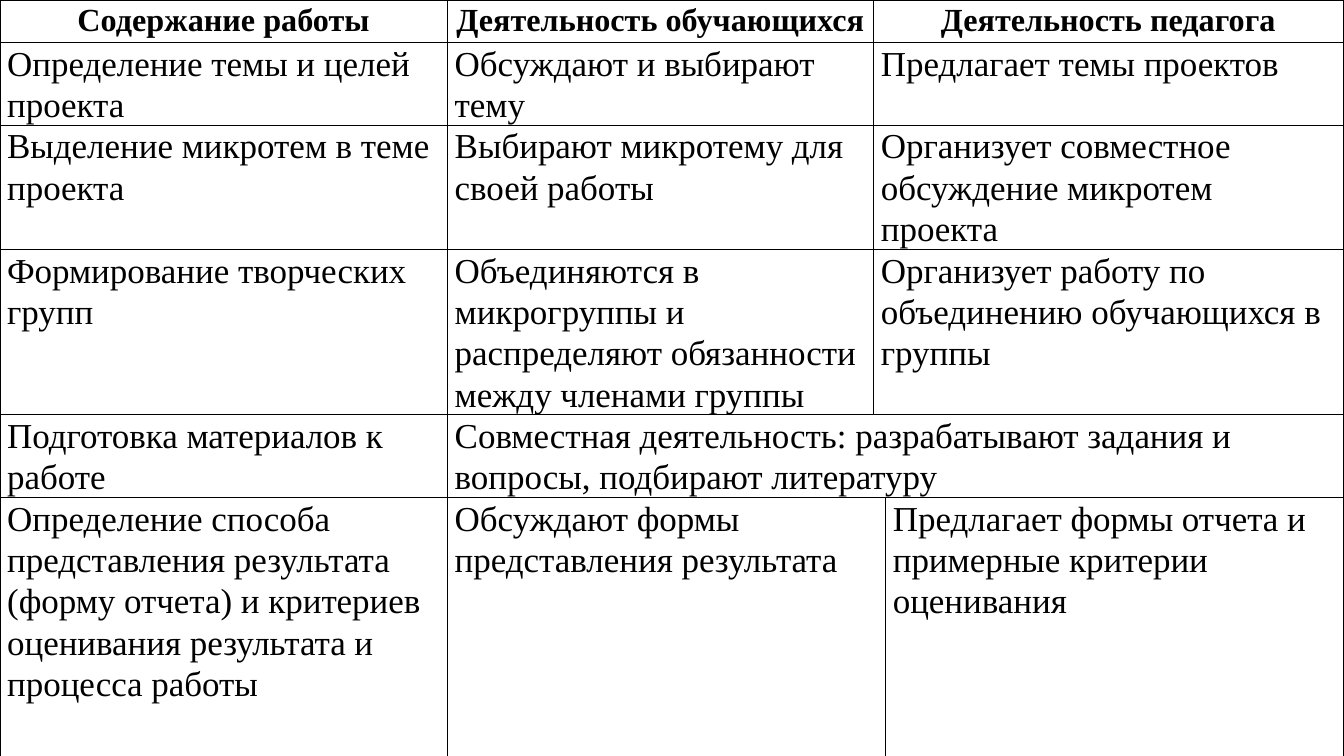
from lxml.etree import SubElement
from pptx import Presentation
from pptx.dml.color import RGBColor
from pptx.enum.text import PP_ALIGN
from pptx.oxml.ns import qn
from pptx.util import Cm, Pt

BLACK, WHITE = "000000", "FFFFFF"


def paint(color_format, color):
    color_format.rgb = RGBColor.from_string(color)


def outline(cell, color, width):
    properties = cell._tc.get_or_add_tcPr()
    for side in ("lnL", "lnR", "lnT", "lnB"):
        line = SubElement(properties, qn(f"a:{side}"), w=str(width))
        fill = SubElement(line, qn("a:solidFill"))
        SubElement(fill, qn("a:srgbClr"), val=color)


column_widths = [11.28, 10.74, 0.3, 11.53]
row_heights = [1.07, 2.03, 3.05, 4.04, 2.03, 6.86]

regular_spans = [(0, 0), (1, 1), (2, 3)]
joint_spans = [(0, 0), (1, 3)]
final_spans = [(0, 0), (1, 2), (3, 3)]

stages = [
    (regular_spans, ["Содержание работы", "Деятельность обучающихся", "Деятельность педагога"]),
    (regular_spans, ["Определение темы и целей проекта", "Обсуждают и выбирают тему",
                     "Предлагает темы проектов"]),
    (regular_spans, ["Выделение микротем в теме проекта", "Выбирают микротему для своей работы",
                     "Организует совместное обсуждение микротем проекта"]),
    (regular_spans, ["Формирование творческих групп",
                     "Объединяются в микрогруппы и распределяют обязанности между членами группы",
                     "Организует работу по объединению обучающихся в группы"]),
    (joint_spans, ["Подготовка материалов к работе",
                   "Совместная деятельность: разрабатывают задания и вопросы, подбирают литературу"]),
    (final_spans, ["Определение способа представления результата (форму отчета) и критериев "
                   "оценивания результата и процесса работы",
                   "Обсуждают формы представления результата",
                   "Предлагает формы отчета и примерные критерии оценивания"]),
]

presentation = Presentation()
presentation.slide_width = Cm(33.87)
presentation.slide_height = Cm(19.05)
slide = presentation.slides.add_slide(presentation.slide_layouts[6])

project_plan = slide.shapes.add_table(
    len(row_heights), len(column_widths), Cm(0), Cm(0),
    Cm(sum(column_widths)), Cm(sum(row_heights))).table
project_plan.first_row = False
project_plan.horz_banding = False
for column, width in zip(project_plan.columns, column_widths):
    column.width = Cm(width)
for row, height in zip(project_plan.rows, row_heights):
    row.height = Cm(height)

for cell in project_plan.iter_cells():
    outline(cell, BLACK, Pt(1))
    cell.fill.solid()
    paint(cell.fill.fore_color, WHITE)
    cell.margin_left = cell.margin_right = Cm(0.18)
    cell.margin_top = cell.margin_bottom = Cm(0)

for row_index, (spans, texts) in enumerate(stages):
    is_header = row_index == 0
    for (first, last), text in zip(spans, texts):
        cell = project_plan.cell(row_index, first)
        if last > first:
            cell.merge(project_plan.cell(row_index, last))
        cell.text_frame.text = text
        paragraph = cell.text_frame.paragraphs[0]
        paragraph.alignment = PP_ALIGN.CENTER if is_header else PP_ALIGN.LEFT
        paragraph.line_spacing = 1.07
        font = paragraph.runs[0].font
        font.name = "Times New Roman"
        font.size = Pt(23 if is_header else 25)
        font.bold = is_header
        paint(font.color, BLACK)

presentation.save("out.pptx")
